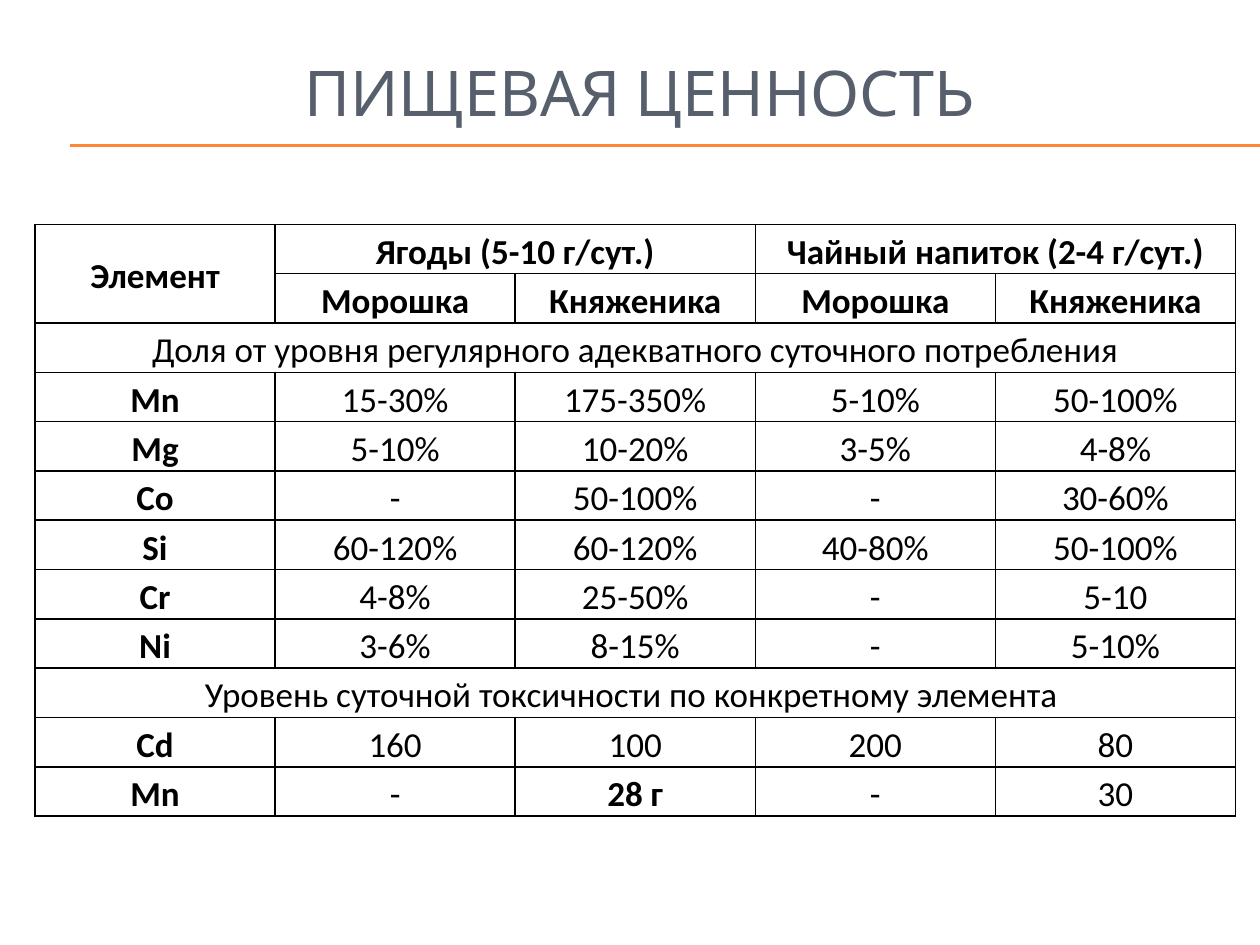
import pptx
import pptx.util
import pptx.dml.color
import pptx.enum.shapes
import pptx.enum.text
import pptx.oxml.ns
from lxml import etree

Pt = pptx.util.Pt
RGBColor = pptx.dml.color.RGBColor
PP_ALIGN = pptx.enum.text.PP_ALIGN
MIDDLE = pptx.enum.text.MSO_ANCHOR.MIDDLE
qn = pptx.oxml.ns.qn

SLATE = RGBColor(0x57, 0x5F, 0x6D)
ORANGE = RGBColor(0xFE, 0x86, 0x37)
BLACK = RGBColor(0, 0, 0)

TITLE = "ПИЩЕВАЯ ЦЕННОСТЬ"
ROWS = [
    ["Элемент", "Ягоды (5-10 г/сут.)", "", "Чайный напиток (2-4 г/сут.)", ""],
    ["", "Морошка", "Княженика", "Морошка", "Княженика"],
    ["Доля от уровня регулярного адекватного суточного потребления", "", "", "", ""],
    ["Mn", "15-30%", "175-350%", "5-10%", "50-100%"],
    ["Mg", "5-10%", "10-20%", "3-5%", "4-8%"],
    ["Co", "-", "50-100%", "-", "30-60%"],
    ["Si", "60-120%", "60-120%", "40-80%", "50-100%"],
    ["Cr", "4-8%", "25-50%", "-", "5-10"],
    ["Ni", "3-6%", "8-15%", "-", "5-10%"],
    ["Уровень суточной токсичности по конкретному элемента ", "", "", "", ""],
    ["Cd", "160", "100", "200", "80"],
    ["Mn", "-", "28 г", "-", "30"],
]
HEADER_ROWS = 2
SECTION_ROWS = [2, 9]
BOLD_VALUES = ["28 г"]
MERGES = [((0, 0), (1, 0)), ((0, 1), (0, 2)), ((0, 3), (0, 4))]
MERGES += [((r, 0), (r, 4)) for r in SECTION_ROWS]

TABLE_LEFT, TABLE_TOP, COL_WIDTH, ROW_HEIGHT = 20, 128.2, 137.2, 28.2
RULE_LEFT, RULE_TOPS = 40.3, [82.8, 83.5]


def write(tf, text, font, size, color, bold=False):
    tf.text = text
    p = tf.paragraphs[0]
    p.alignment = PP_ALIGN.CENTER
    for r in p.runs:
        r.font.name = font
        r.font.size = Pt(size)
        r.font.color.rgb = color
        r.font.bold = bold
    return p


def add_borders(cell):
    tc_pr = cell._tc.get_or_add_tcPr()
    for side in ("a:lnL", "a:lnR", "a:lnT", "a:lnB"):
        ln = etree.SubElement(tc_pr, qn(side), w=str(Pt(1)))
        fill = etree.SubElement(ln, qn("a:solidFill"))
        etree.SubElement(fill, qn("a:srgbClr"), val=str(BLACK))


def fill_cell(cell, text, bold):
    add_borders(cell)
    cell.fill.background()
    cell.vertical_anchor = MIDDLE
    cell.margin_left = cell.margin_right = Pt(5)
    cell.margin_top = cell.margin_bottom = 0
    p = write(cell.text_frame, text, "Calibri", 20, BLACK, bold)
    p.line_spacing = 1.15


prs = pptx.Presentation()
prs.slide_width, prs.slide_height = Pt(720), Pt(540)
s = prs.slides.add_slide(prs.slide_layouts[6])

for y in RULE_TOPS:
    rule = s.shapes.add_connector(
        pptx.enum.shapes.MSO_CONNECTOR.STRAIGHT, Pt(RULE_LEFT), Pt(y), Pt(720), Pt(y))
    rule.line.color.rgb = ORANGE
    rule.line.width = Pt(0.75)
    etree.SubElement(rule._element.spPr, qn("a:effectLst"))

title = s.shapes.add_textbox(Pt(23.8), Pt(20.9), Pt(684), Pt(62.6))
title.text_frame.word_wrap = True
title.text_frame.vertical_anchor = MIDDLE
write(title.text_frame, TITLE, "Karla", 36, SLATE)

n_rows, n_cols = len(ROWS), len(ROWS[0])
table = s.shapes.add_table(
    n_rows, n_cols, Pt(TABLE_LEFT), Pt(TABLE_TOP),
    Pt(COL_WIDTH * n_cols), Pt(ROW_HEIGHT * n_rows)).table
table.first_row = table.horz_banding = False
for col in table.columns:
    col.width = Pt(COL_WIDTH)
for i, row in enumerate(ROWS):
    table.rows[i].height = Pt(ROW_HEIGHT)
    for j, text in enumerate(row):
        label = j == 0 and i not in SECTION_ROWS
        fill_cell(table.cell(i, j), text, i < HEADER_ROWS or label or text in BOLD_VALUES)
for first, last in MERGES:
    table.cell(*first).merge(table.cell(*last))

prs.save("out.pptx")
